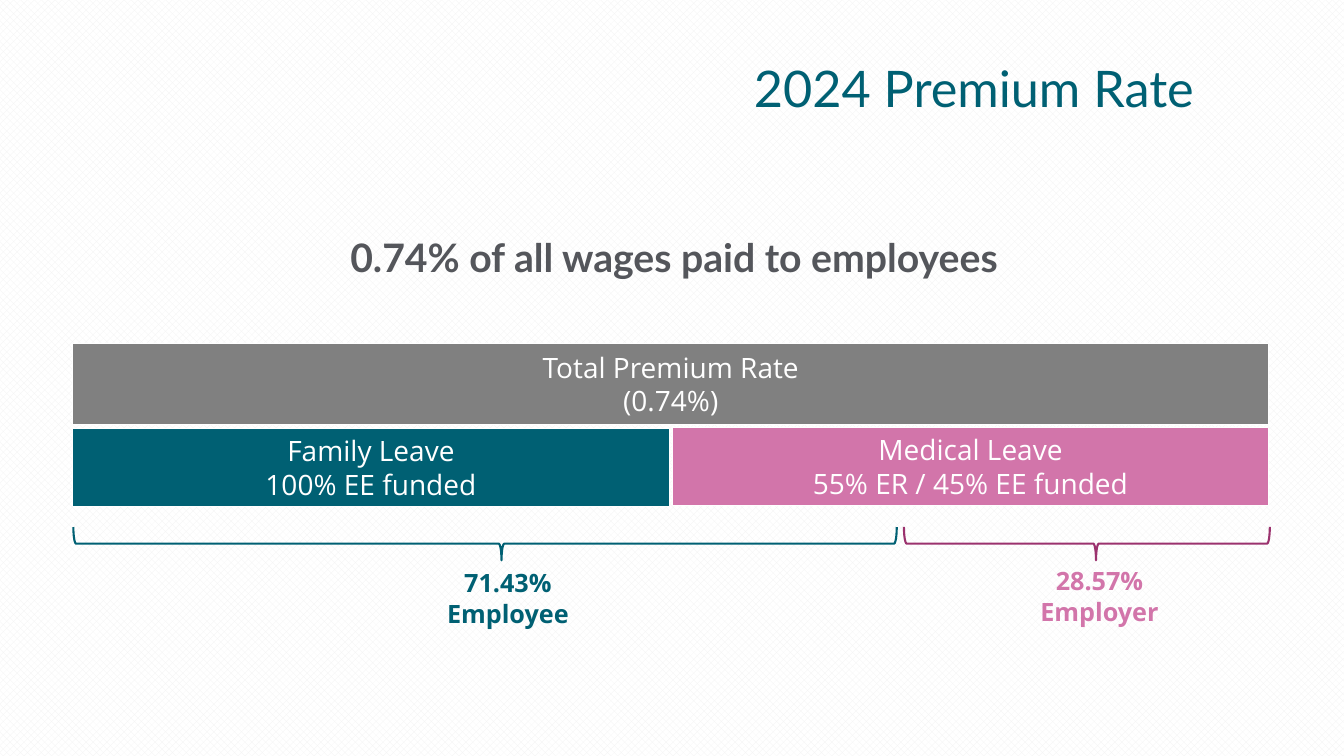
from pptx import Presentation
from pptx.dml.color import RGBColor
from pptx.enum.dml import MSO_PATTERN
from pptx.enum.shapes import MSO_SHAPE
from pptx.enum.text import MSO_ANCHOR, PP_ALIGN
from pptx.util import Cm, Pt

HEX = {"teal": "006073", "pink": "D275AA", "plum": "9B326E", "gray": "808080",
       "ink": "54565B", "white": "FFFFFF", "dots": "F2F2F2"}

BARS = [
    (("Family Leave", "100% EE funded"), "teal", (1.83, 10.8, 15.04, 1.96)),
    (("Medical Leave", "55% ER / 45% EE funded"), "pink", (16.94, 10.77, 15.04, 1.96)),
    (("Total Premium Rate", "(0.74%)"), "gray", (1.83, 8.66, 30.15, 2.03)),
]
BRACES = [
    ("plum", 22.78, 9.22, 0.475, True),
    ("teal", 1.85, 20.75, 0.52, False),
]
TOP, THICK = 13.28, 0.84
MID, LEFT = PP_ALIGN.CENTER, PP_ALIGN.LEFT
TEXTS = [
    ("71.43% Employee", "teal", (10.54, 14.17, 4.52, 1.8), "Open Sans", 18, True, MID, 1),
    ("28.57% Employer", "pink", (25.45, 14.12, 4.52, 1.8), "Open Sans", 18, True, MID, 1),
    ("0.74% of all wages paid to employees", "ink", (1.96, 5.74, 30.05, 1.45),
     "Lato", 28, True, MID, 1),
    ("2024 Premium Rate", "teal", (18.75, 0.46, 12.14, 3.68), "Lato", 36, False, LEFT, 0.9),
]


def rgb(name):
    return RGBColor.from_string(HEX[name])


def write(shape, lines, font, size, color, bold=False, align=MID, space=1):
    frame = shape.text_frame
    frame.word_wrap = True
    frame.vertical_anchor = MSO_ANCHOR.MIDDLE
    para = frame.paragraphs[0]
    para.alignment = align
    para.line_spacing = space
    for num, line in enumerate(lines):
        if num:
            para.add_line_break()
        run = para.add_run()
        run.text = line
        run.font.name = font
        run.font.size = Pt(size)
        run.font.bold = bold
        run.font.color.rgb = rgb(color)


def draw(slide, kind, box, line, width):
    shape = slide.shapes.add_shape(kind, *map(Cm, box))
    shape.shadow.inherit = False
    shape.line.color.rgb = rgb(line)
    shape.line.width = Pt(width)
    return shape


def brace(slide, color, left, span, tip, flip):
    box = (left + (span - THICK) / 2, TOP - (span - THICK) / 2, THICK, span)
    shape = draw(slide, MSO_SHAPE.LEFT_BRACE, box, color, 1.5)
    shape.fill.background()
    shape.rotation = 270
    shape.adjustments[0] = 0.083
    shape.adjustments[1] = tip
    if flip:
        shape.element.spPr.xfrm.set("flipV", "1")


def main():
    """Build the premium rate slide."""
    deck = Presentation()
    deck.slide_width, deck.slide_height = Cm(33.87), Cm(19.05)
    slide = deck.slides.add_slide(deck.slide_layouts[6])
    back = slide.background.fill
    back.patterned()
    back.pattern = MSO_PATTERN.PERCENT_50
    back.fore_color.rgb = rgb("dots")
    back.back_color.rgb = rgb("white")

    for lines, color, box in BARS:
        bar = draw(slide, MSO_SHAPE.RECTANGLE, box, "white", 0.75)
        bar.fill.solid()
        bar.fill.fore_color.rgb = rgb(color)
        write(bar, lines, "Open Sans", 20, "white")
    for item in BRACES:
        brace(slide, *item)
    for text, color, box, font, size, bold, align, space in TEXTS:
        label = slide.shapes.add_textbox(*map(Cm, box))
        write(label, [text], font, size, color, bold, align, space)
    deck.save("out.pptx")


if __name__ == "__main__":
    main()
